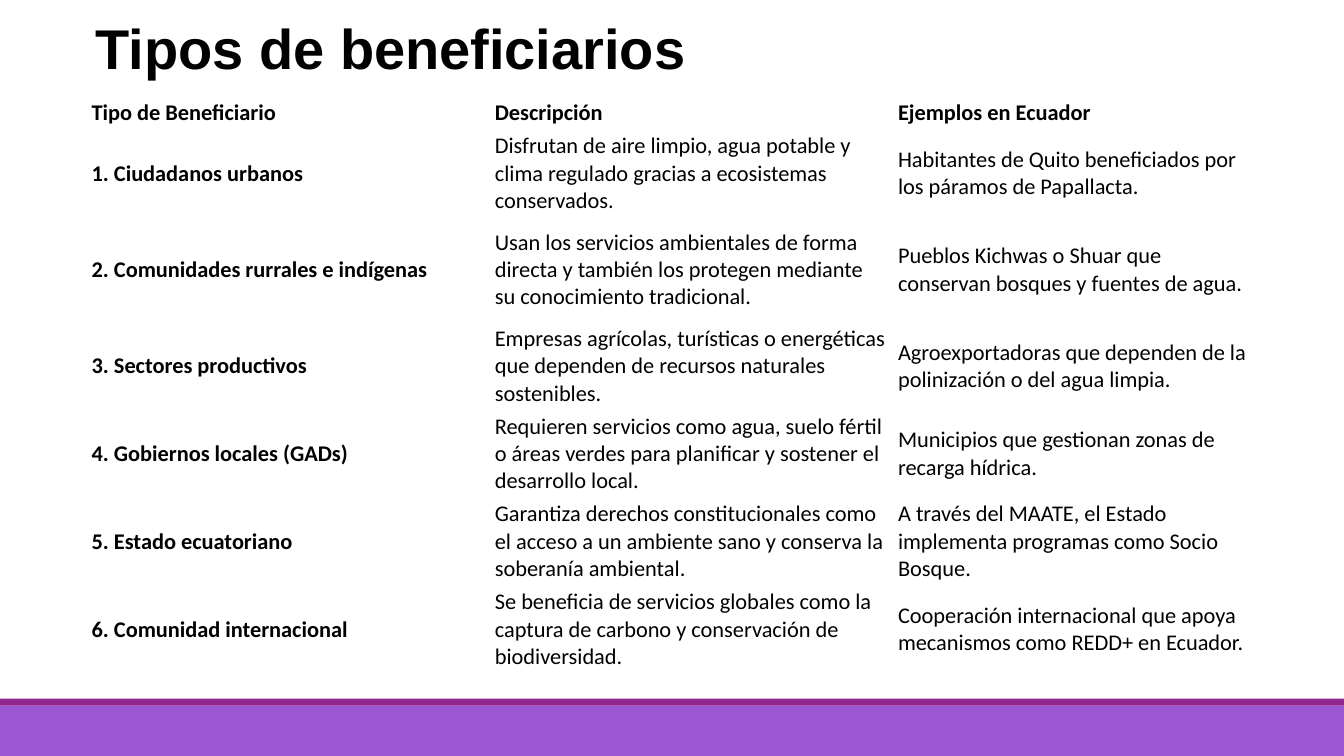
from typing import NamedTuple

from pptx import Presentation
from pptx.dml.color import RGBColor
from pptx.enum.shapes import MSO_SHAPE
from pptx.enum.text import MSO_ANCHOR, MSO_AUTO_SIZE, PP_ALIGN
from pptx.util import Pt

RECTANGLE = MSO_SHAPE.RECTANGLE
TOP, MIDDLE = MSO_ANCHOR.TOP, MSO_ANCHOR.MIDDLE
LEFT = PP_ALIGN.LEFT
NO_AUTOFIT = MSO_AUTO_SIZE.NONE

BLACK = RGBColor(0x00, 0x00, 0x00)
VIOLET = RGBColor(0x9B, 0x57, 0xD3)
PURPLE = RGBColor(0x92, 0x27, 0x8F)

SLIDE_WIDTH, SLIDE_HEIGHT = 960, 540
CONTENT_LEFT = 61.2
COLUMN_WIDTHS = (288, 288, 263)
ROW_HEIGHTS = (23, 62, 75, 62, 62, 62, 62)


class Band(NamedTuple):
    top: float
    height: float
    color: RGBColor


class Beneficiary(NamedTuple):
    kind: str
    description: str
    example: str


FOOTER_BANDS = (Band(504, 36, VIOLET), Band(499, 5, PURPLE))

HEADER = Beneficiary("Tipo de Beneficiario", "Descripción", "Ejemplos en Ecuador")
BENEFICIARIES = (
    Beneficiary(
        "1. Ciudadanos urbanos",
        "Disfrutan de aire limpio, agua potable y clima regulado gracias a ecosistemas conservados.",
        "Habitantes de Quito beneficiados por los páramos de Papallacta."),
    Beneficiary(
        "2. Comunidades rurrales e indígenas",
        "Usan los servicios ambientales de forma directa y también los protegen mediante "
        "su conocimiento tradicional.",
        "Pueblos Kichwas o Shuar que conservan bosques y fuentes de agua."),
    Beneficiary(
        "3. Sectores productivos",
        "Empresas agrícolas, turísticas o energéticas que dependen de recursos naturales sostenibles.",
        "Agroexportadoras que dependen de la polinización o del agua limpia."),
    Beneficiary(
        "4. Gobiernos locales (GADs)",
        "Requieren servicios como agua, suelo fértil o áreas verdes para planificar y sostener "
        "el desarrollo local.",
        "Municipios que gestionan zonas de recarga hídrica."),
    Beneficiary(
        "5. Estado ecuatoriano",
        "Garantiza derechos constitucionales como el acceso a un ambiente sano y conserva "
        "la soberanía ambiental.",
        "A través del MAATE, el Estado implementa programas como Socio Bosque."),
    Beneficiary(
        "6. Comunidad internacional",
        "Se beneficia de servicios globales como la captura de carbono y conservación de biodiversidad.",
        "Cooperación internacional que apoya mecanismos como REDD+ en Ecuador."),
)


def add_text(paragraph, text: str, font_name: str, size: float, bold: bool) -> None:
    paragraph.alignment = LEFT
    run = paragraph.add_run()
    run.text = text
    run.font.name = font_name
    run.font.size = Pt(size)
    run.font.bold = bold
    run.font.color.rgb = BLACK


def add_band(slide, band: Band) -> None:
    stripe = slide.shapes.add_shape(
        RECTANGLE, Pt(0), Pt(band.top), Pt(SLIDE_WIDTH), Pt(band.height))
    stripe.shadow.inherit = False
    stripe.fill.solid()
    stripe.fill.fore_color.rgb = band.color
    stripe.line.fill.background()


def place_heading(slide, text: str) -> None:
    heading = slide.shapes.title
    heading.left, heading.top = Pt(CONTENT_LEFT), Pt(3.6)
    heading.width, heading.height = Pt(SLIDE_WIDTH - CONTENT_LEFT), Pt(77.8)
    frame = heading.text_frame
    frame.auto_size = NO_AUTOFIT
    frame.word_wrap = True
    frame.vertical_anchor = TOP
    frame.margin_top = Pt(6)
    add_text(frame.paragraphs[0], text, "Arial", 40, True)


def fill_cell(cell, text: str, bold: bool) -> None:
    cell.fill.background()
    cell.vertical_anchor = MIDDLE
    cell.margin_left = cell.margin_right = Pt(4.3)
    cell.margin_top = cell.margin_bottom = Pt(2)
    add_text(cell.text_frame.paragraphs[0], text, "Calibri", 16, bold)


def add_beneficiary_table(slide) -> None:
    rows = (HEADER, *BENEFICIARIES)
    table = slide.shapes.add_table(
        len(rows), len(COLUMN_WIDTHS), Pt(CONTENT_LEFT), Pt(69),
        Pt(sum(COLUMN_WIDTHS)), Pt(sum(ROW_HEIGHTS))).table
    table.first_row = False
    table.horz_banding = False
    for column, width in zip(table.columns, COLUMN_WIDTHS):
        column.width = Pt(width)
    for r, (beneficiary, height) in enumerate(zip(rows, ROW_HEIGHTS)):
        table.rows[r].height = Pt(height)
        for c, text in enumerate(beneficiary):
            fill_cell(table.cell(r, c), text, bold=r == 0 or c == 0)


def main() -> None:
    presentation = Presentation()
    presentation.slide_width = Pt(SLIDE_WIDTH)
    presentation.slide_height = Pt(SLIDE_HEIGHT)
    title_only = presentation.slide_layouts[5]
    slide = presentation.slides.add_slide(title_only)

    # Footer bands
    for band in FOOTER_BANDS:
        add_band(slide, band)

    # Heading and table
    place_heading(slide, "Tipos de beneficiarios")
    add_beneficiary_table(slide)

    presentation.save("out.pptx")


if __name__ == "__main__":
    main()
